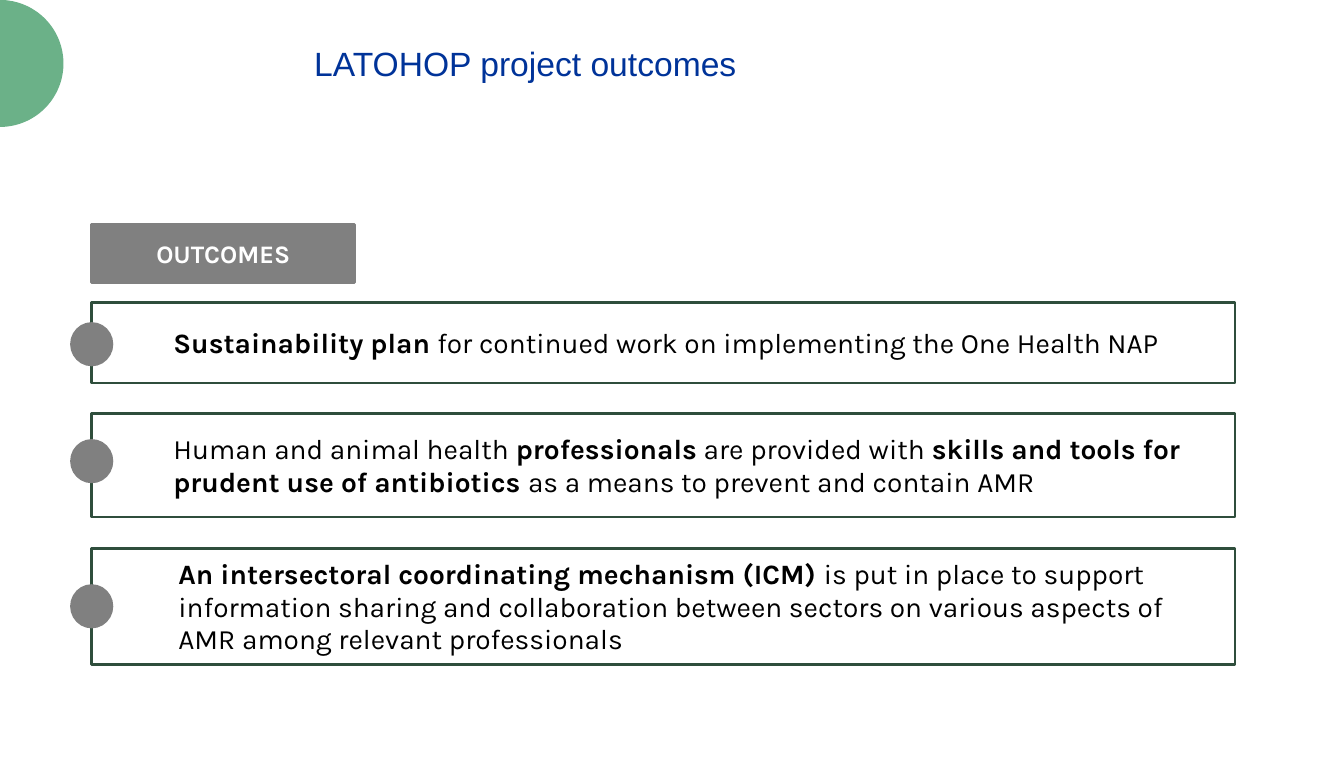
from math import cos, pi, sin

from pptx import Presentation
from pptx.dml.color import RGBColor
from pptx.enum.shapes import MSO_SHAPE
from pptx.enum.text import MSO_ANCHOR, PP_ALIGN
from pptx.util import Inches, Pt

BLUE = RGBColor(0x00, 0x33, 0x99)
GREEN = RGBColor(0x6B, 0xB1, 0x88)
DARK_GREEN = RGBColor(0x2F, 0x4E, 0x3C)
GRAY = RGBColor(0x80, 0x80, 0x80)
BLACK = RGBColor(0x00, 0x00, 0x00)
WHITE = RGBColor(0xFF, 0xFF, 0xFF)

BOX_LEFT, BOX_WIDTH = 0.91, 11.34
MARKER_WIDTH, MARKER_HEIGHT = 0.4, 0.41

# Top, height, text margin, marker top, (text, bold) runs
OUTCOMES = [
    (3, 0.8, 0.81, 3.21, [
        ("Sustainability plan ", True),
        ("for continued work on implementing the One Health NAP", False),
    ]),
    (4.1, 1.03, 0.81, 4.37, [
        ("Human and animal health ", False),
        ("professionals", True),
        (" are provided with ", False),
        ("skills and tools for prudent use of antibiotics ", True),
        ("as a means to prevent and contain AMR", False),
    ]),
    (5.44, 1.15, 0.86, 5.81, [
        ("An intersectoral coordinating mechanism (ICM) ", True),
        ("is put in place to support information sharing and collaboration "
         "between sectors on various aspects of AMR among relevant "
         "professionals", False),
    ]),
]


class OutcomesSlide:
    heading_font = "Arial"
    body_font = "Karla"

    def __init__(self, presentation):
        self.slide = presentation.slides.add_slide(presentation.slide_layouts[5])

    def set_font(self, paragraph, name, size, color):
        paragraph.font.name = name
        paragraph.font.size = Pt(size)
        paragraph.font.color.rgb = color

    def add_title(self, text, left, top, width, height):
        title = self.slide.shapes.title
        title.left, title.top = Inches(left), Inches(top)
        title.width, title.height = Inches(width), Inches(height)
        title.text_frame.text = text
        title.text_frame.vertical_anchor = MSO_ANCHOR.MIDDLE
        paragraph = title.text_frame.paragraphs[0]
        paragraph.alignment = PP_ALIGN.CENTER
        self.set_font(paragraph, self.heading_font, 24, BLUE)

    def add_half_disc(self, radius, steps=90):
        """Draw a half disc against the left edge, from the top corner."""
        points = [
            (Inches(radius * sin(pi * step / steps)),
             Inches(radius * (1 - cos(pi * step / steps))))
            for step in range(1, steps + 1)
        ]
        builder = self.slide.shapes.build_freeform(0, 0)
        builder.add_line_segments(points, close=True)
        shape = builder.convert_to_shape()
        shape.shadow.inherit = False
        shape.fill.solid()
        shape.fill.fore_color.rgb = GREEN
        shape.line.fill.background()

    def add_shape(self, kind, left, top, width, height, fill, line):
        shape = self.slide.shapes.add_shape(
            kind, Inches(left), Inches(top), Inches(width), Inches(height))
        shape.shadow.inherit = False
        shape.fill.solid()
        shape.fill.fore_color.rgb = fill
        shape.line.color.rgb = line
        shape.line.width = Pt(2)
        return shape

    def add_label(self, text, left, top, width, height):
        label = self.add_shape(
            MSO_SHAPE.RECTANGLE, left, top, width, height, GRAY, GRAY)
        label.text_frame.text = text
        label.text_frame.vertical_anchor = MSO_ANCHOR.MIDDLE
        paragraph = label.text_frame.paragraphs[0]
        paragraph.alignment = PP_ALIGN.CENTER
        self.set_font(paragraph, self.body_font, 18, WHITE)
        paragraph.font.bold = True

    def add_outcome(self, top, height, text_margin, marker_top, runs):
        box = self.add_shape(MSO_SHAPE.RECTANGLE, BOX_LEFT, top, BOX_WIDTH,
                             height, WHITE, DARK_GREEN)
        frame = box.text_frame
        frame.word_wrap = True
        frame.vertical_anchor = MSO_ANCHOR.MIDDLE
        frame.margin_left = Inches(text_margin)
        paragraph = frame.paragraphs[0]
        paragraph.alignment = PP_ALIGN.LEFT
        paragraph.line_spacing = Pt(23.3)
        self.set_font(paragraph, self.body_font, 20, BLACK)
        for text, bold in runs:
            run = paragraph.add_run()
            run.text = text
            run.font.bold = bold
        self.add_shape(MSO_SHAPE.FLOWCHART_CONNECTOR,
                       BOX_LEFT - MARKER_WIDTH / 2, marker_top,
                       MARKER_WIDTH, MARKER_HEIGHT, GRAY, GRAY)


def main():
    presentation = Presentation()
    presentation.slide_width = Inches(13.33)
    presentation.slide_height = Inches(7.51)
    slide = OutcomesSlide(presentation)
    slide.add_half_disc(0.63)
    slide.add_title("LATOHOP project outcomes", 0.83, 0.34, 8.76, 0.58)
    for outcome in OUTCOMES:
        slide.add_outcome(*outcome)
    slide.add_label("OUTCOMES", BOX_LEFT, 2.23, 2.61, 0.57)
    presentation.save("out.pptx")


if __name__ == "__main__":
    main()
